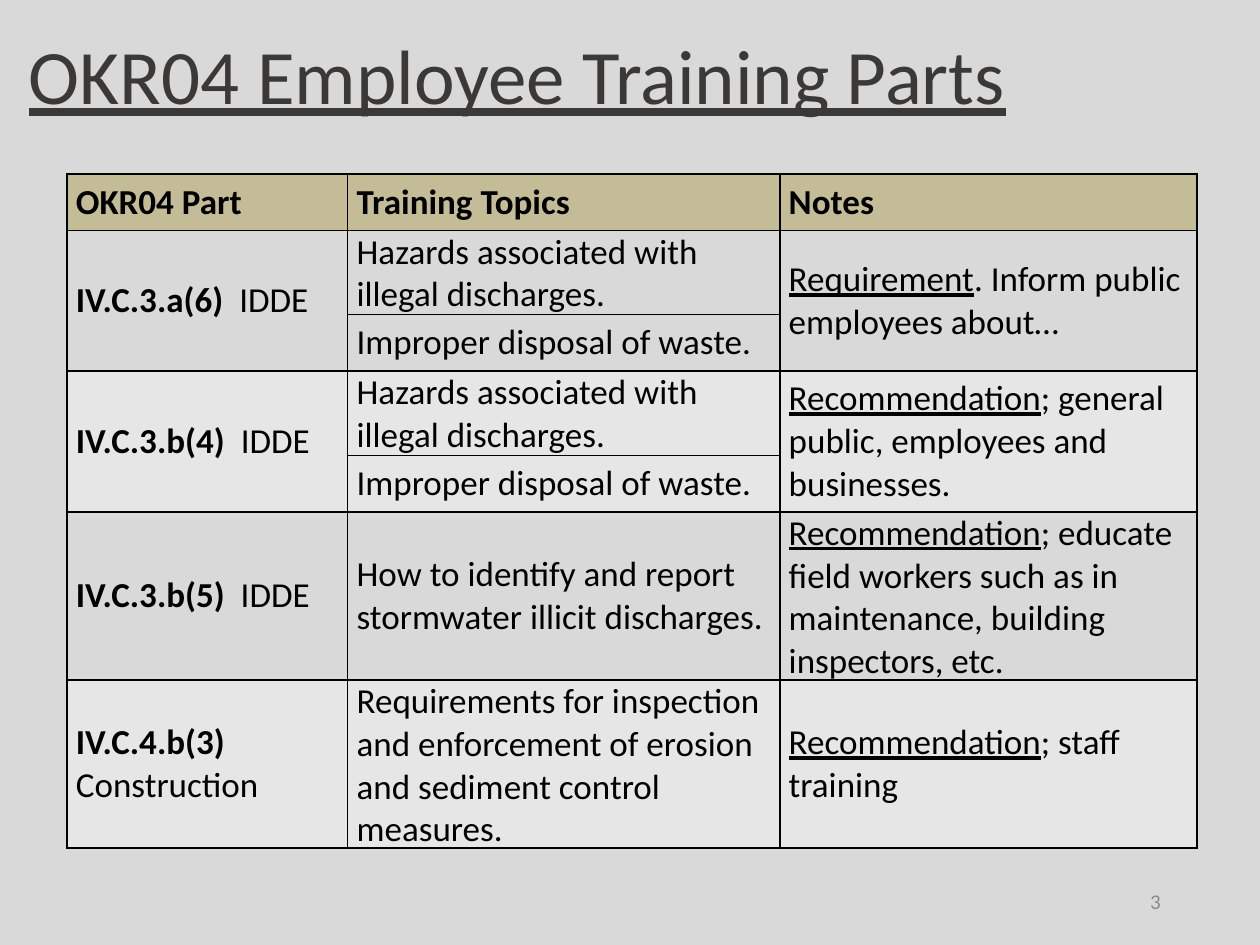
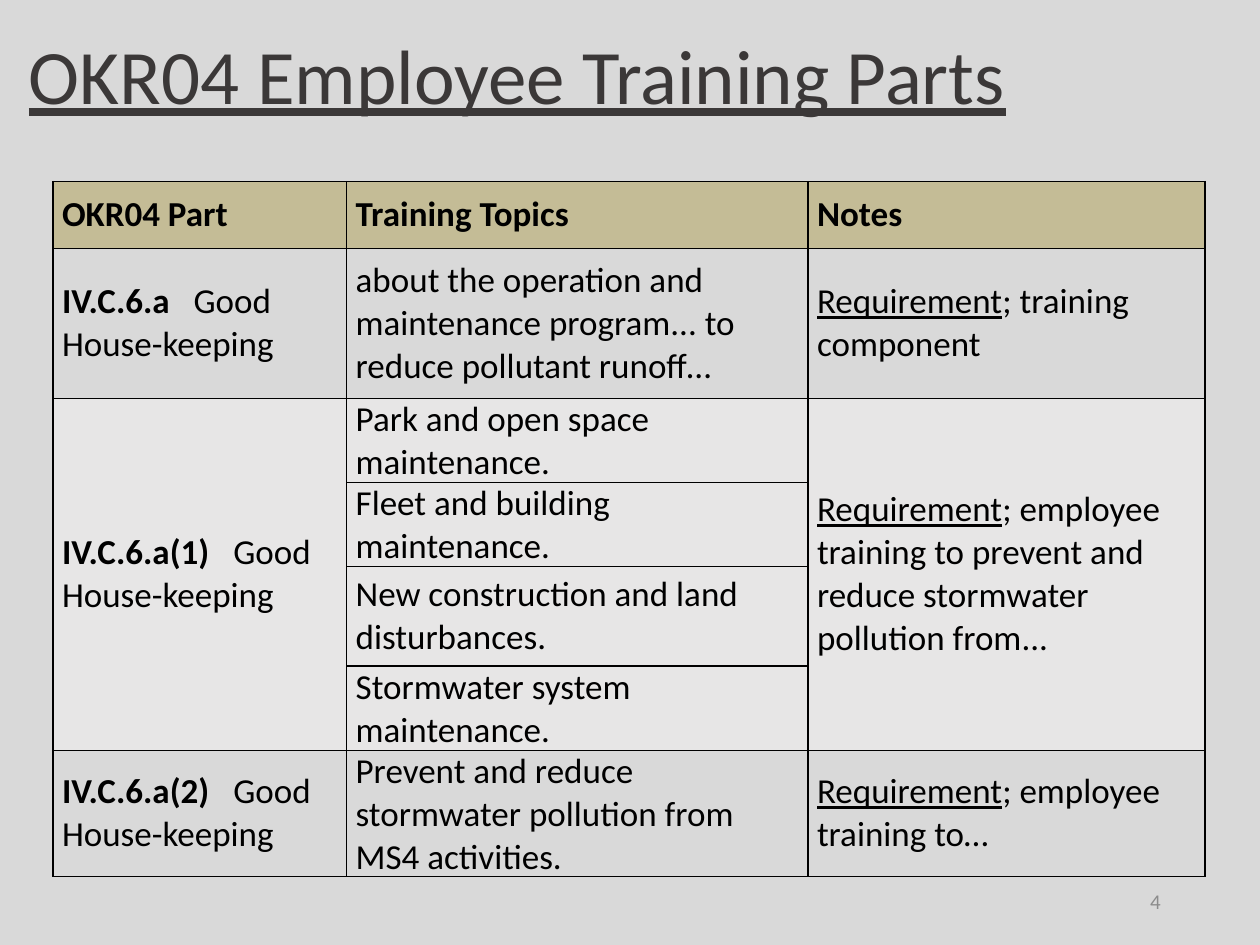
from pptx import Presentation
from pptx.dml.color import RGBColor
from pptx.enum.text import MSO_ANCHOR as Anchor, MSO_AUTO_SIZE as Fit, PP_ALIGN as Align
from pptx.oxml import parse_xml
from pptx.oxml.ns import nsdecls
from pptx.util import Cm, Pt

FONT = "Calibri"
BACK, INK, TITLE, GREY = "D9D9D9", "000000", "3B3838", "8C8C8C"
HEAD, BAND = "C4BC96", "E7E6E6"
HEADS = ["OKR04 Part", "Training Topics", "Notes"]


def color(code):
    return RGBColor.from_string(code)


class Deck:
    def __init__(self):
        self.prs = Presentation()
        self.prs.slide_width, self.prs.slide_height = Cm(25.4), Cm(19.05)
        fill = self.prs.slide_master.background.fill
        fill.solid()
        fill.fore_color.rgb = color(BACK)
        self.slide = None

    def style(self, run, size, code, bold=False, line=False):
        font = run.font
        font.name, font.size = FONT, Pt(size)
        font.bold, font.underline = bold, line
        font.color.rgb = color(code)

    def place(self, shape, left, top, width, height):
        shape.left, shape.top = Cm(left), Cm(top)
        shape.width, shape.height = Cm(width), Cm(height)

    def title(self, text):
        self.slide = self.prs.slides.add_slide(self.prs.slide_layouts[5])
        shape = self.slide.shapes.title
        self.place(shape, 0.33, 0.43, 24.82, 2.11)
        frame = shape.text_frame
        frame.text = text
        frame.auto_size, frame.vertical_anchor = Fit.NONE, Anchor.MIDDLE
        para = frame.paragraphs[0]
        para.alignment = Align.LEFT
        self.style(para.runs[0], 44, TITLE, line=True)

    def number(self, num):
        box = self.slide.shapes.add_textbox(Cm(17.93), Cm(17.65), Cm(5.72), Cm(1.02))
        frame = box.text_frame
        frame.text = str(num)
        frame.word_wrap, frame.vertical_anchor = True, Anchor.MIDDLE
        para = frame.paragraphs[0]
        para.alignment = Align.RIGHT
        self.style(para.runs[0], 12, GREY)

    def border(self, cell):
        props = cell._tc.get_or_add_tcPr()
        for i, side in enumerate("LRTB"):
            props.insert(i, parse_xml(
                f'<a:ln{side} {nsdecls("a")} w="12700"><a:solidFill>'
                f'<a:srgbClr val="{INK}"/></a:solidFill></a:ln{side}>'))

    def cell(self, cell, parts, fill):
        """Write (text, bold, underline) parts into a cell."""
        para = cell.text_frame.paragraphs[0]
        for text, bold, line in parts:
            run = para.add_run()
            run.text = text
            self.style(run, 20, INK, bold, line)
        cell.vertical_anchor = Anchor.MIDDLE
        cell.margin_left = cell.margin_right = Cm(0.18)
        cell.margin_top = cell.margin_bottom = 0
        if fill:
            cell.fill.solid()
            cell.fill.fore_color.rgb = color(fill)
        else:
            cell.fill.background()
        self.border(cell)

    def table(self, left, top, cols, rows, groups):
        """Each group is (part, area, topics, duty, note); groups are banded."""
        grid = self.slide.shapes.add_table(
            len(rows), len(cols), Cm(left), Cm(top),
            Cm(sum(cols)), Cm(sum(rows))).table
        grid.horz_banding = False
        for col, width in zip(grid.columns, cols):
            col.width = Cm(width)
        for row, height in zip(grid.rows, rows):
            row.height = Cm(height)

        # Header row
        for c, text in enumerate(HEADS):
            self.cell(grid.cell(0, c), [(text, True, False)], HEAD)

        # One group of rows for each permit part
        top_row = 1
        for g, (part, area, topics, duty, note) in enumerate(groups):
            fill = BAND if g % 2 else None
            for i, topic in enumerate(topics):
                first = [(part, True, False), (area, False, False)]
                last = [(duty, False, True), (note, False, False)]
                texts = [[] if i else first, [(topic, False, False)], [] if i else last]
                for c, parts in enumerate(texts):
                    self.cell(grid.cell(top_row + i, c), parts, fill)
            end = top_row + len(topics) - 1
            if end > top_row:
                for c in (0, 2):
                    grid.cell(top_row, c).merge(grid.cell(end, c))
            top_row = end + 1


NEED, ADVICE = "Requirement", "Recommendation"
WASTE = ["Hazards associated with illegal discharges.", "Improper disposal of waste."]

# Illicit discharge and construction parts
SITE = [
    ("IV.C.3.a(6)  ", "IDDE", WASTE, NEED, ". Inform public employees about…"),
    ("IV.C.3.b(4)  ", "IDDE", WASTE, ADVICE,
     "; general public, employees and businesses."),
    ("IV.C.3.b(5)", "  IDDE",
     ["How to identify and report stormwater illicit discharges."], ADVICE,
     "; educate field workers such as in maintenance, building inspectors, etc."),
    ("IV.C.4.b(3)", "  Construction",
     ["Requirements for inspection and enforcement of erosion and sediment "
      "control measures."], ADVICE, "; staff training"),
]

# Good housekeeping parts
HOUSE = [
    ("IV.C.6.a", "   Good House-keeping",
     ["about the operation and maintenance program... to reduce pollutant runoff…"],
     NEED, "; training component"),
    ("IV.C.6.a(1)   ", "Good House-keeping",
     ["Park and open space maintenance.", "Fleet and building maintenance.",
      "New construction and land disturbances.", "Stormwater system maintenance."],
     NEED, "; employee training to prevent and reduce stormwater pollution from..."),
    ("IV.C.6.a(2)   ", "Good House-keeping",
     ["Prevent and reduce stormwater pollution from MS4 activities."],
     NEED, "; employee training to…"),
]

# Left, top, column widths, row heights and content of each table
PAGES = [
    (1.35, 3.51, [5.66, 8.71, 8.41], [1.14, 1.68, 1.14, 1.68, 1.14, 3.38, 3.15], SITE),
    (1.07, 3.66, [5.92, 9.3, 8], [1.35, 3.02, 1.35, 1.35, 2.01, 1.35, 2.49], HOUSE),
]


def main():
    deck = Deck()
    for num, page in enumerate(PAGES, 3):
        deck.title("OKR04 Employee Training Parts")
        deck.number(num)
        deck.table(*page)
    deck.prs.save("out.pptx")


if __name__ == "__main__":
    main()
